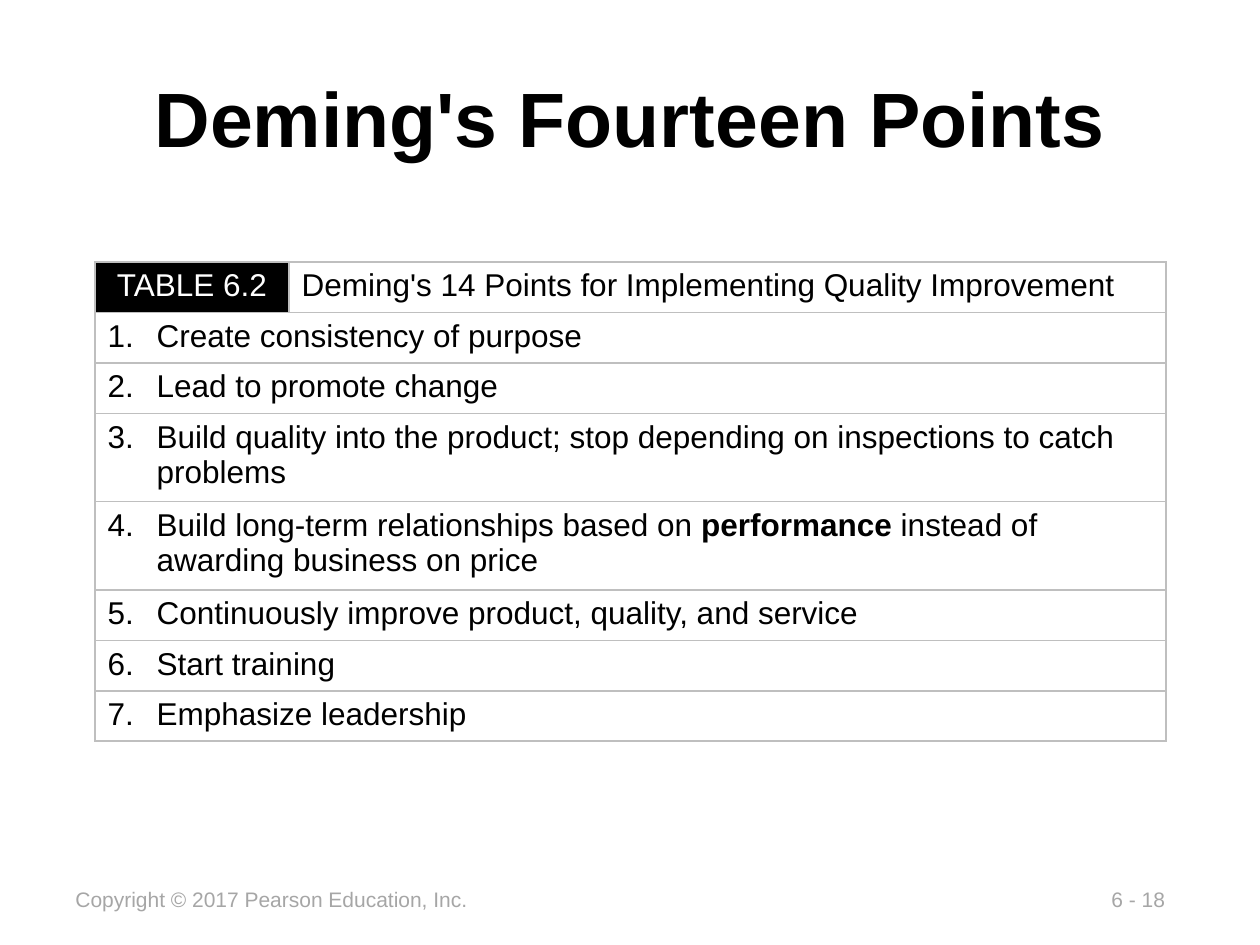
from lxml import etree
from pptx import Presentation
from pptx import util as u
from pptx.dml.color import RGBColor
from pptx.enum import text
from pptx.oxml import ns

SCALE = 914400 / 126
BLACK = RGBColor(0, 0, 0)
WHITE = RGBColor(255, 255, 255)
GREY = RGBColor(0xA6, 0xA6, 0xA6)
RULE = RGBColor(0xBF, 0xBF, 0xBF)
LEFT, MID = text.PP_ALIGN.LEFT, text.PP_ALIGN.CENTER

# Each point is a list of runs; odd runs are bold
POINTS = [
    ["Create consistency of purpose"],
    ["Lead to promote change"],
    ["Build quality into the product; stop depending on inspections to catch problems"],
    ["Build long-term relationships based on ", "performance",
     " instead of awarding business on price"],
    ["Continuously improve product, quality, and service"],
    ["Start training"],
    ["Emphasize leadership"],
]
HEAD = ["TABLE 6.2", "Deming's 14 Points for Implementing Quality Improvement"]
COLS = [194, 877]
LOW, TALL = 48, 83
ROWS = [LOW] * 3 + [TALL] * 2 + [LOW] * 3


def px(n):
    return u.Emu(round(n * SCALE))


def style(para, size, color, align=LEFT, bold=False):
    para.alignment = align
    font = para.font
    font.name, font.size, font.bold = "Arial", u.Pt(size), bold
    font.color.rgb = color


def add_text(slide, box, words, size, color, align=LEFT, bold=False, wrap=False):
    frame = slide.shapes.add_textbox(*map(px, box)).text_frame
    frame.word_wrap = wrap
    frame.vertical_anchor = text.MSO_ANCHOR.MIDDLE
    para = frame.paragraphs[0]
    para.text = words
    style(para, size, color, align, bold)


def add_rules(cell):
    props = cell._tc.get_or_add_tcPr()
    for side in ("lnL", "lnR", "lnT", "lnB"):
        line = etree.SubElement(props, ns.qn("a:" + side), w=str(u.Pt(1)))
        fill = etree.SubElement(line, ns.qn("a:solidFill"))
        etree.SubElement(fill, ns.qn("a:srgbClr"), val=str(RULE))


def add_point(cell, num, parts):
    para = cell.text_frame.paragraphs[0]
    props = para._p.get_or_add_pPr()
    props.set("marL", str(px(49)))
    props.set("indent", str(-px(49)))
    for i, part in enumerate(parts):
        run = para.add_run()
        run.text = part if i else f"{num}.\t{part}"
        if i % 2:
            run.font.bold = True
    style(para, 18, BLACK)


def add_table(slide):
    table = slide.shapes.add_table(
        len(ROWS), len(COLS), px(95), px(262), px(sum(COLS)), px(sum(ROWS))).table
    table.first_row = table.horz_banding = False
    for col, width in zip(table.columns, COLS):
        col.width = px(width)
    for row, height in zip(table.rows, ROWS):
        row.height = px(height)
    for cell in table.iter_cells():
        add_rules(cell)
        cell.fill.background()

    # Heading row
    for i, (words, color, align) in enumerate(zip(HEAD, (WHITE, BLACK), (MID, LEFT))):
        para = table.cell(0, i).text_frame.paragraphs[0]
        para.text = words
        style(para, 18, color, align)
    tag = table.cell(0, 0).fill
    tag.solid()
    tag.fore_color.rgb = BLACK

    # Numbered points, each across both columns
    for num, parts in enumerate(POINTS, 1):
        cell = table.cell(num, 0)
        cell.merge(table.cell(num, 1))
        add_point(cell, num, parts)


def main():
    deck = Presentation()
    deck.slide_width, deck.slide_height = px(1260), px(945)
    slide = deck.slides.add_slide(deck.slide_layouts[6])

    # Footer
    add_text(slide, (1099, 880, 82, 38), "6 - 18", 12, GREY)
    add_text(slide, (63, 880, 422, 38),
             "Copyright © 2017 Pearson Education, Inc.", 12, GREY)

    # Title and table
    add_text(slide, (95, 61, 1071, 112), "Deming's Fourteen Points", 44, BLACK,
             MID, bold=True, wrap=True)
    add_table(slide)
    deck.save("out.pptx")


if __name__ == "__main__":
    main()
